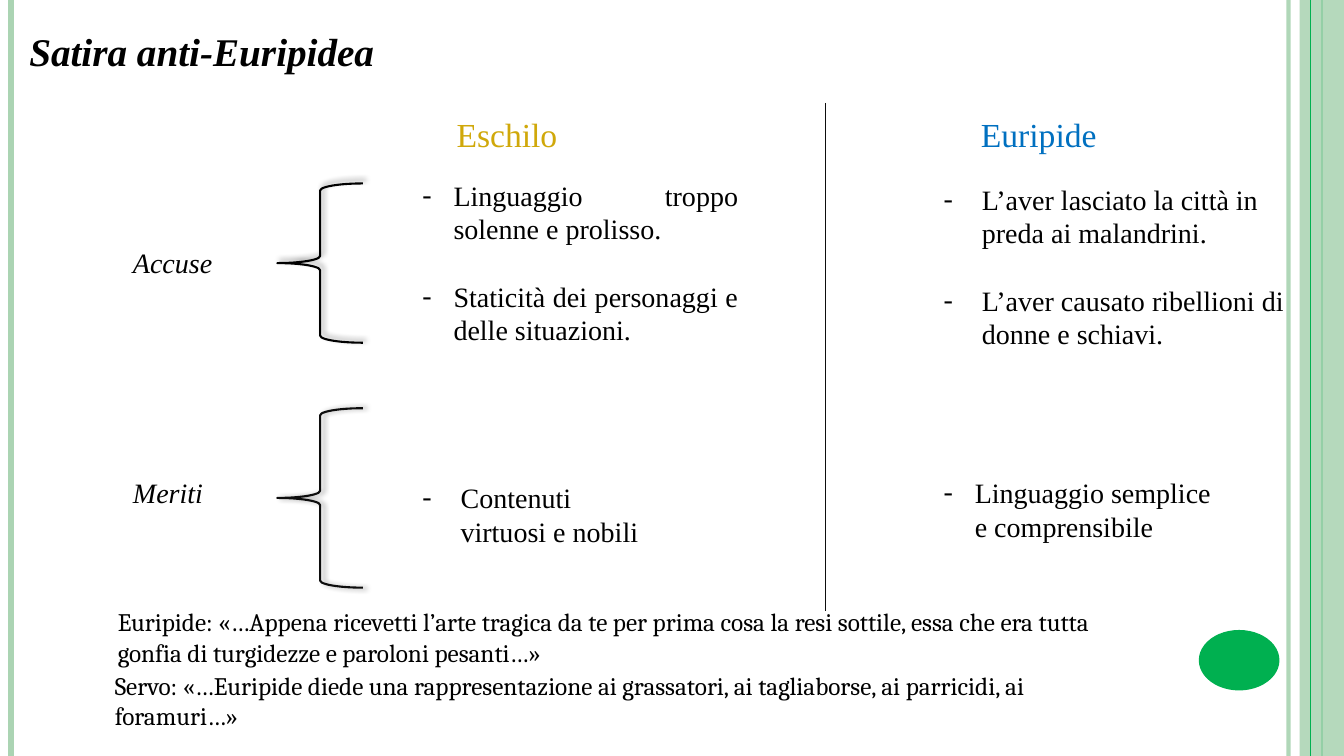
"""Build the slide on the satire against Euripides."""
import pptx
import pptx.util
import pptx.dml.color
import pptx.enum.shapes
import pptx.enum.text
import pptx.oxml
import pptx.oxml.ns
import lxml.etree

Inches = pptx.util.Inches
Pt = pptx.util.Pt
SHAPE = pptx.enum.shapes.MSO_SHAPE
ALIGN = pptx.enum.text.PP_ALIGN
NS = pptx.oxml.ns.nsdecls("a")
INK = {"black": "000000", "dark": "0D0D0D", "pale": "ABD4B3",
       "green": "00B050", "gold": "D0A80A", "blue": "0070C0"}
rgb = {name: pptx.dml.color.RGBColor.from_string(code) for name, code in INK.items()}

deck = pptx.Presentation()
deck.slide_width, deck.slide_height = Inches(13.33), Inches(7.5)
slide = deck.slides.add_slide(deck.slide_layouts[5])
shapes = slide.shapes


def write(text, box, size=20, color="black", font="Times New Roman", bold=False,
          italic=False, indent=0, align=ALIGN.LEFT, shape=None):
    """Put text in a box; an indent makes each line a dash item."""
    left, top, width, height = map(Inches, box)
    shape = shape or shapes.add_textbox(left, top, width, height)
    shape.left, shape.top, shape.width, shape.height = left, top, width, height
    frame = shape.text_frame
    frame.text = text
    frame.word_wrap = True
    frame.auto_size = pptx.enum.text.MSO_AUTO_SIZE.NONE
    frame.vertical_anchor = pptx.enum.text.MSO_ANCHOR.TOP
    for row, para in enumerate(frame.paragraphs):
        para.alignment = align
        para.space_before = Pt(24 if row else 0)
        style = para.runs[0].font
        style.name, style.size = font, Pt(size)
        style.bold, style.italic = bold, italic
        style.color.rgb = rgb[color]
        if indent:
            props = para._p.get_or_add_pPr()
            props.set("marL", str(Inches(indent)))
            props.set("indent", str(-Inches(indent)))
            props.append(pptx.oxml.parse_xml(f'<a:buFont {NS} typeface="Times New Roman"/>'))
            props.append(pptx.oxml.parse_xml(f'<a:buChar {NS} char="-"/>'))


def rule(x, top, end, color, width, alpha=100):
    """Draw an upright line."""
    line = shapes.add_connector(pptx.enum.shapes.MSO_CONNECTOR.STRAIGHT,
                                Inches(x), Inches(top), Inches(x), Inches(end))
    line.line.color.rgb = rgb[color]
    line.line.width = Pt(width)
    props = line._element.spPr
    tint = props.find(".//" + pptx.oxml.ns.qn("a:srgbClr"))
    if alpha < 100:
        lxml.etree.SubElement(tint, pptx.oxml.ns.qn("a:alpha"), val=str(alpha * 1000))
    props.append(pptx.oxml.parse_xml(f"<a:effectLst {NS}/>"))


rule(12.78, 0, 7.5, "pale", 3, 93)
rule(0.11, 0, 7.5, "pale", 4.5)
rule(13.11, 0, 7.5, "green", 1.5)
for kind, box, color, alpha in [
    (SHAPE.RECTANGLE, (12.89, 0, 0.44, 7.5), "pale", 87),
    (SHAPE.OVAL, (11.89, 6.25, 0.8, 0.6), "green", 100),
]:
    deco = shapes.add_shape(kind, *map(Inches, box))
    deco.shadow.inherit = False
    deco.fill.solid()
    deco.fill.fore_color.rgb = rgb[color]
    deco.line.fill.background()
    tint = deco._element.spPr.find(".//" + pptx.oxml.ns.qn("a:srgbClr"))
    lxml.etree.SubElement(tint, pptx.oxml.ns.qn("a:alpha"), val=str(alpha * 1000))
rule(13, 0, 7.5, "green", 0.75)

write("Satira anti-Euripidea", (0.19, 0.22, 4.99, 0.57), size=28, bold=True,
      italic=True, shape=shapes.title)
write("Eschilo", (4.43, 1.08, 3.33, 0.5), size=24, color="gold")
write("Euripide", (9.63, 1.08, 3.52, 0.5), size=24, color="blue")

write("Linguaggio troppo solenne e prolisso.\nStaticità dei personaggi e delle situazioni.",
      (4.09, 1.72, 3.33, 1.78), indent=0.31, align=ALIGN.JUSTIFY)
write("L’aver lasciato la città in preda ai malandrini.\n"
      "L’aver causato ribellioni di donne e schiavi.",
      (9.26, 1.76, 3.68, 1.78), indent=0.38)
write("Contenuti virtuosi e nobili", (4.09, 4.72, 2.42, 1.11), indent=0.38)
write("Linguaggio semplice e comprensibile", (9.26, 4.67, 3.01, 1.08), indent=0.31)

for text, top, brace_top, height, color, angle in [
    ("Accuse", 2.39, 1.82, 1.58, "black", 315),
    ("Meriti", 4.67, 4.05, 1.78, "dark", 0),
]:
    write(text, (1.22, top, 1.65, 0.44), italic=True)
    brace = shapes.add_shape(SHAPE.LEFT_BRACE, Inches(2.75), Inches(brace_top),
                             Inches(0.85), Inches(height))
    brace.fill.background()
    brace.line.color.rgb = rgb[color]
    brace.line.width = Pt(1.5)
    brace._element.spPr.append(pptx.oxml.parse_xml(
        f'<a:effectLst {NS}><a:outerShdw blurRad="{Pt(4)}" dist="{Pt(3)}" '
        f'dir="{angle * 60000}" algn="ctr" rotWithShape="0">'
        f'<a:srgbClr val="{INK["black"]}"><a:alpha val="40000"/></a:srgbClr>'
        '</a:outerShdw></a:effectLst>'))

rule(8.19, 1.02, 6.06, "dark", 1)
write("Euripide: «…Appena ricevetti l’arte tragica da te per prima cosa la resi sottile, "
      "essa che era tutta gonfia di turgidezze e paroloni pesanti…»",
      (1.07, 5.97, 10.5, 0.71), size=18, font="Cambria")
write("Servo: «…Euripide diede una rappresentazione ai grassatori, ai tagliaborse, "
      "ai parricidi, ai foramuri…»",
      (1.04, 6.6, 10.16, 0.71), size=18, font="Cambria")

deck.save("out.pptx")
